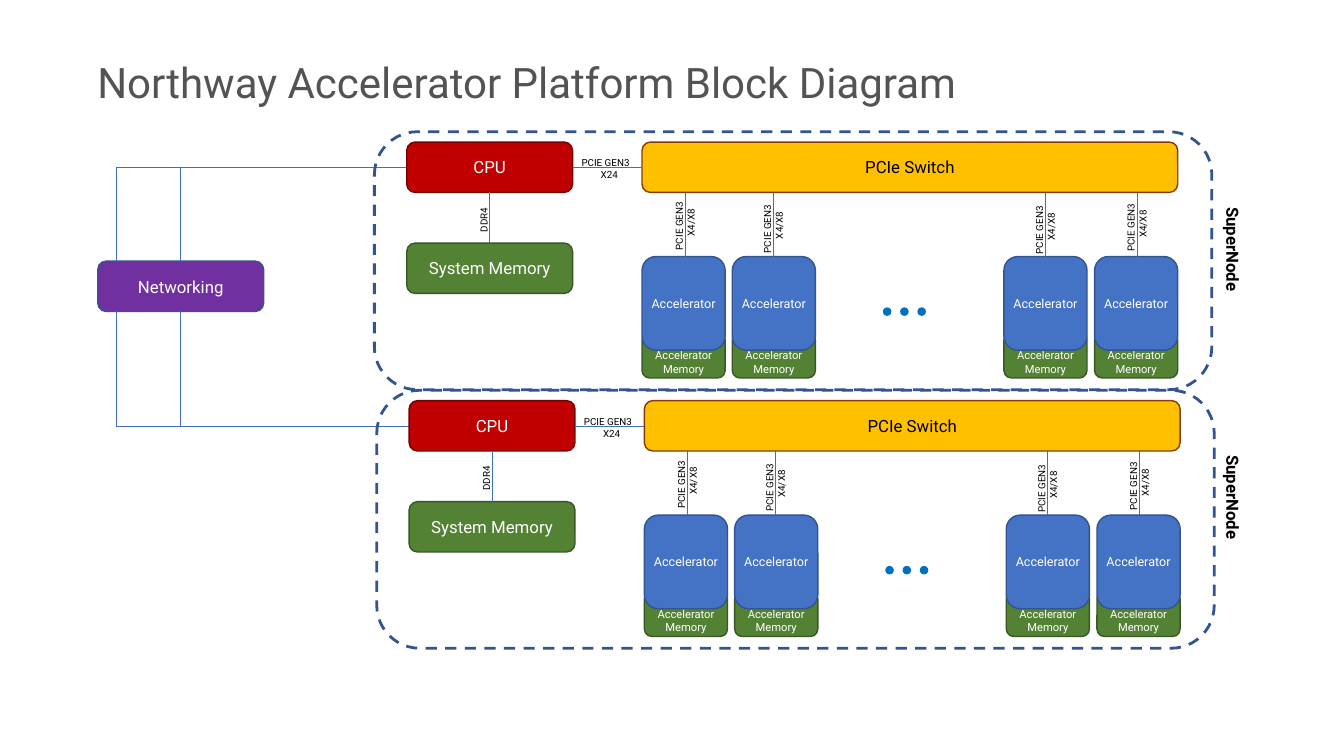
from dataclasses import dataclass

from lxml.etree import SubElement
from pptx import Presentation
from pptx.dml.color import RGBColor
from pptx.enum.dml import MSO_LINE
from pptx.enum.shapes import MSO_CONNECTOR, MSO_SHAPE
from pptx.enum.text import MSO_ANCHOR, MSO_AUTO_SIZE, PP_ALIGN
from pptx.oxml.ns import qn
from pptx.util import Cm, Pt

FONT = "Roboto"
HUES = {
    "title": "535353", "white": "FFFFFF", "black": "000000",
    "purple": "7030A0", "navy": "325491", "wire": "3F6FC3",
    "red": "C00000", "maroon": "750002", "gold": "FFC000", "brown": "843C0B",
    "green": "548235", "forest": "385723", "blue": "4472C4", "dot": "0070C0",
}


@dataclass
class Block:
    text: str
    left: float
    top: float
    width: float
    height: float
    fill: str
    edge: str
    size: int = 24
    ink: str = "white"


@dataclass
class Lane:
    left: float
    wire: float
    label: float


@dataclass
class Node:
    left: float
    top: float
    tag: float


WIDE, HIGH = 8.36, 2.54
MID = HIGH / 2
BUS = 11.86
ROW = 5.77
LANES = [
    Lane(BUS, 14.02, 4.05),
    Lane(16.41, 18.47, 4.2),
    Lane(30.1, 32.18, 4.26),
    Lane(34.67, 36.8, 4.13),
]
NODES = [Node(20.62, 20.19, 28.63), Node(20.5, 7.16, 16.13)]
HUB = Block("Networking", 4.93, 13.16, WIDE, HIGH, "purple", "navy")
PARTS = [
    Block("CPU", 0, 0, WIDE, HIGH, "red", "maroon"),
    Block("PCIe Switch", BUS, 0, 27, HIGH, "gold", "brown", ink="black"),
    Block("System Memory", 0, 5.09, WIDE, HIGH, "green", "forest"),
]

deck = Presentation()
deck.slide_width, deck.slide_height = Cm(67.74), Cm(38.1)
slide = deck.slides.add_slide(deck.slide_layouts[5])
shapes = slide.shapes


def tint(name: str) -> RGBColor:
    return RGBColor.from_string(HUES[name])


def style(para, size: int, ink: str, bold: bool = False) -> None:
    font = para.font
    font.name, font.size, font.bold = FONT, Pt(size), bold
    font.color.rgb = tint(ink)


def add_block(block: Block, x: float = 0, y: float = 0):
    shape = shapes.add_shape(
        MSO_SHAPE.ROUNDED_RECTANGLE, Cm(x + block.left), Cm(y + block.top),
        Cm(block.width), Cm(block.height))
    shape.shadow.inherit = False
    shape.fill.solid()
    shape.fill.fore_color.rgb = tint(block.fill)
    shape.line.color.rgb = tint(block.edge)
    shape.line.width = Pt(2)
    frame = shape.text_frame
    frame.word_wrap = True
    frame.vertical_anchor = MSO_ANCHOR.MIDDLE
    para = frame.paragraphs[0]
    para.text = block.text
    para.alignment = PP_ALIGN.CENTER
    style(para, block.size, block.ink)
    return shape


def add_wire(x1: float, y1: float, x2: float, y2: float, bent: bool = False) -> None:
    kind = MSO_CONNECTOR.ELBOW if bent else MSO_CONNECTOR.STRAIGHT
    wire = shapes.add_connector(kind, Cm(x1), Cm(y1), Cm(x2), Cm(y2))
    wire.line.color.rgb = tint("wire")
    wire.line.width = Pt(0.75)
    props = wire.element.spPr
    if bent:
        props.find(qn("a:prstGeom")).set("prst", "bentConnector2")
    SubElement(props, qn("a:effectLst"))


def add_label(lines: list[str], x: float, y: float, width: float, height: float,
              turn: int = 0, size: int = 14, bold: bool = False) -> None:
    box = shapes.add_textbox(
        Cm(x - width / 2), Cm(y - height / 2), Cm(width), Cm(height))
    box.rotation = turn
    frame = box.text_frame
    frame.word_wrap = True
    for i, text in enumerate(lines):
        para = frame.add_paragraph() if i else frame.paragraphs[0]
        para.text = text
        para.alignment = PP_ALIGN.CENTER if i else PP_ALIGN.LEFT
        style(para, size, "black", bold)


def add_frame(x: float, y: float) -> None:
    frame = shapes.add_shape(
        MSO_SHAPE.ROUNDED_RECTANGLE, Cm(x - 1.63), Cm(y - 0.52), Cm(42.21), Cm(13))
    frame.shadow.inherit = False
    frame.fill.background()
    frame.line.color.rgb = tint("navy")
    frame.line.width = Pt(4)
    frame.line.dash_style = MSO_LINE.DASH


def add_dots(x: float, y: float) -> None:
    for i in range(3):
        dot = shapes.add_shape(
            MSO_SHAPE.OVAL, Cm(x + i * 0.87), Cm(y), Cm(0.43), Cm(0.43))
        dot.shadow.inherit = False
        dot.fill.solid()
        dot.fill.fore_color.rgb = tint("dot")
        dot.line.fill.background()


def add_node(node: Node) -> None:
    x, y = node.left, node.top
    for lane in LANES:
        store = add_block(Block("Accelerator Memory", lane.left, 9.6, 4.19, 2.29,
                                "green", "forest", 16), x, y)
        store.text_frame.margin_top = Cm(0.69)
        store.text_frame.margin_bottom = Cm(0)
        add_block(Block("Accelerator", lane.left, ROW, 4.19, 4.72,
                        "blue", "navy", 18), x, y)
        add_wire(x + lane.wire, y + ROW, x + lane.wire, y + HIGH)
        add_label(["PCIE GEN3", "X4/X8"], x + lane.wire, y + lane.label,
                  3.3, 1.45, 270)
    for part in PARTS:
        add_block(part, x, y)
    add_wire(x + WIDE, y + MID, x + BUS, y + MID)
    add_wire(x + WIDE / 2, y + HIGH, x + WIDE / 2, y + 5.09)
    add_frame(x, y)
    add_label(["PCIE GEN3", "X24"], x + 10.21, y + 1.36, 3.3, 1.45)
    add_label(["DDR4"], x + 3.89, y + 2.79, 4.01, 0.86, 270)
    add_label(["SuperNode"], 62.15, node.tag, 11.89, 1.27, 90, 24, True)
    add_dots(x + 24, y + 8.33)


def add_title(text: str) -> None:
    title = shapes.title
    title.left, title.top = Cm(4.65), Cm(2.03)
    title.width, title.height = Cm(58.42), Cm(4.45)
    frame = title.text_frame
    frame.word_wrap = True
    frame.auto_size = MSO_AUTO_SIZE.NONE
    frame.vertical_anchor = MSO_ANCHOR.MIDDLE
    para = frame.paragraphs[0]
    para.text = text
    para.alignment = PP_ALIGN.LEFT
    para.line_spacing = 0.9
    style(para, 60, "title")


add_title("Northway Accelerator Platform Block Diagram")
add_block(HUB)
for node in NODES:
    edge = HUB.top if node.top < HUB.top else HUB.top + HIGH
    for shift in (0, 3.23):
        add_wire(node.left - shift, node.top + MID,
                 HUB.left + WIDE / 2 - shift, edge, bent=True)
for node in NODES:
    add_node(node)
deck.save("out.pptx")
